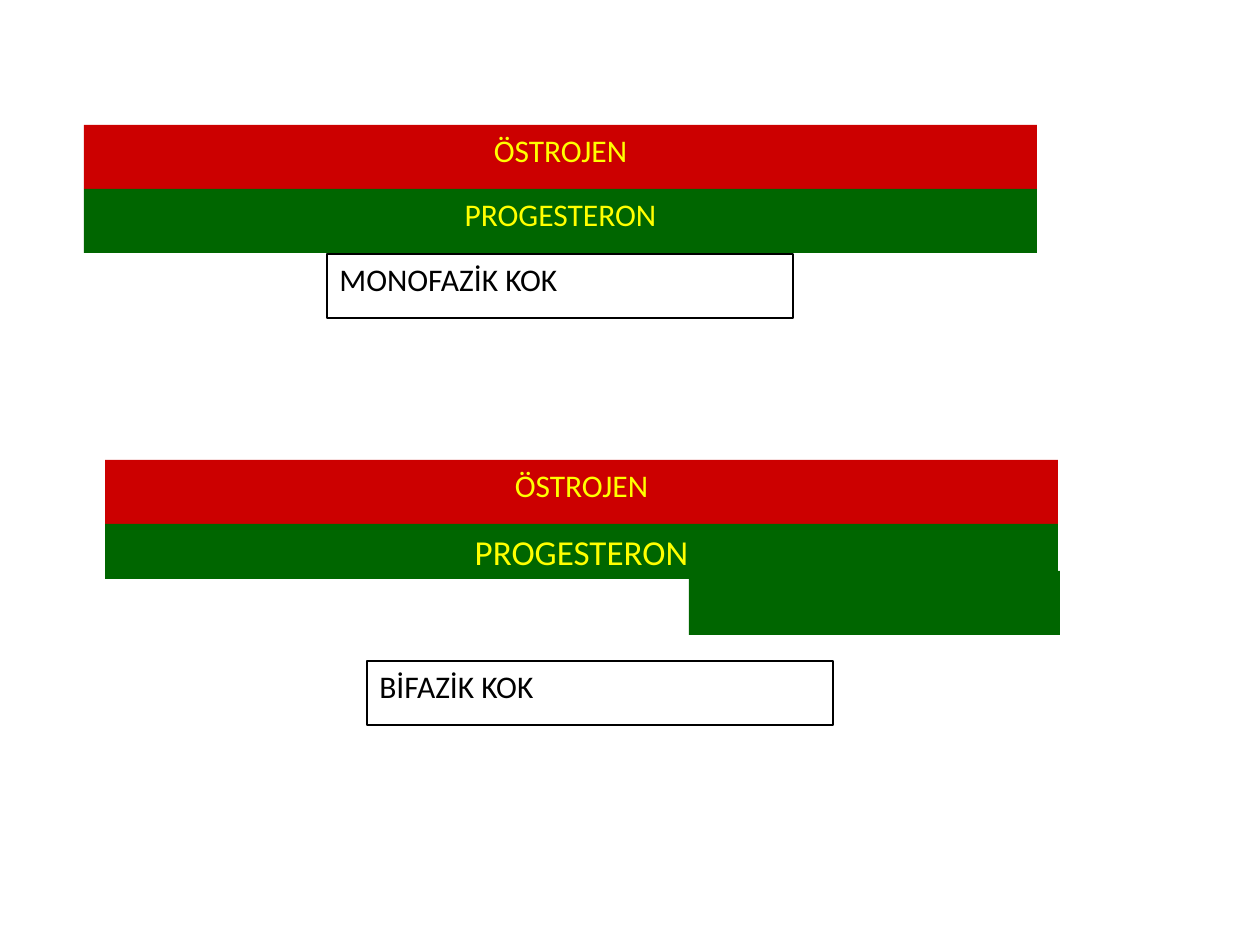
from dataclasses import dataclass
from typing import Optional

import pptx
import pptx.dml.color
import pptx.enum.shapes
import pptx.enum.text
import pptx.slide
import pptx.util

RGB = pptx.dml.color.RGBColor
PX = pptx.util.Inches(1) // 126


@dataclass(frozen=True)
class Theme:
    estrogen: RGB = RGB(0xCC, 0x00, 0x00)
    progesterone: RGB = RGB(0x00, 0x66, 0x00)
    bar_text: RGB = RGB(0xFF, 0xFF, 0x00)
    ink: RGB = RGB(0x00, 0x00, 0x00)
    font: str = "Calibri"
    size: int = 18
    large: int = 20
    outline: float = 0.75


THEME = Theme()
BAR_W, BAR_H = 953, 64
CAPTION_W = 466


@dataclass(frozen=True)
class Box:
    """A filled hormone bar, or an outlined caption when fill is None."""
    left: int
    top: int
    width: int = BAR_W
    height: int = BAR_H
    text: str = ""
    fill: Optional[RGB] = None
    size: int = THEME.size


BOXES = [
    Box(84, 125, text="ÖSTROJEN", fill=THEME.estrogen),
    Box(84, 189, text="PROGESTERON", fill=THEME.progesterone),
    Box(327, 254, CAPTION_W, text="MONOFAZİK KOK"),
    Box(105, 460, text="ÖSTROJEN", fill=THEME.estrogen),
    Box(689, 571, 371, fill=THEME.progesterone),
    Box(105, 524, height=55, text="PROGESTERON", fill=THEME.progesterone,
        size=THEME.large),
    Box(367, 661, CAPTION_W, text="BİFAZİK KOK"),
]


def write_text(sp: pptx.shapes.autoshape.Shape, box: Box) -> None:
    tf = sp.text_frame
    tf.word_wrap = True
    tf.vertical_anchor = pptx.enum.text.MSO_ANCHOR.TOP
    tf.text = box.text
    p = tf.paragraphs[0]
    align = pptx.enum.text.PP_ALIGN
    p.alignment = align.CENTER if box.fill else align.LEFT
    for r in p.runs:
        r.font.name = THEME.font
        r.font.size = pptx.util.Pt(box.size)
        r.font.color.rgb = THEME.bar_text if box.fill else THEME.ink


def draw_box(s: pptx.slide.Slide, box: Box) -> None:
    sp = s.shapes.add_shape(
        pptx.enum.shapes.MSO_SHAPE.RECTANGLE,
        box.left * PX, box.top * PX, box.width * PX, box.height * PX)
    sp.shadow.inherit = False
    if box.fill:
        sp.fill.solid()
        sp.fill.fore_color.rgb = box.fill
        sp.line.fill.background()
    else:
        sp.fill.background()
        sp.line.color.rgb = THEME.ink
        sp.line.width = pptx.util.Pt(THEME.outline)
    if box.text:
        write_text(sp, box)


def main() -> None:
    prs = pptx.Presentation()
    prs.slide_width = pptx.util.Inches(10)
    prs.slide_height = pptx.util.Inches(7.5)
    s = prs.slides.add_slide(prs.slide_layouts[6])
    for box in BOXES:
        draw_box(s, box)
    prs.save("out.pptx")


if __name__ == "__main__":
    main()
